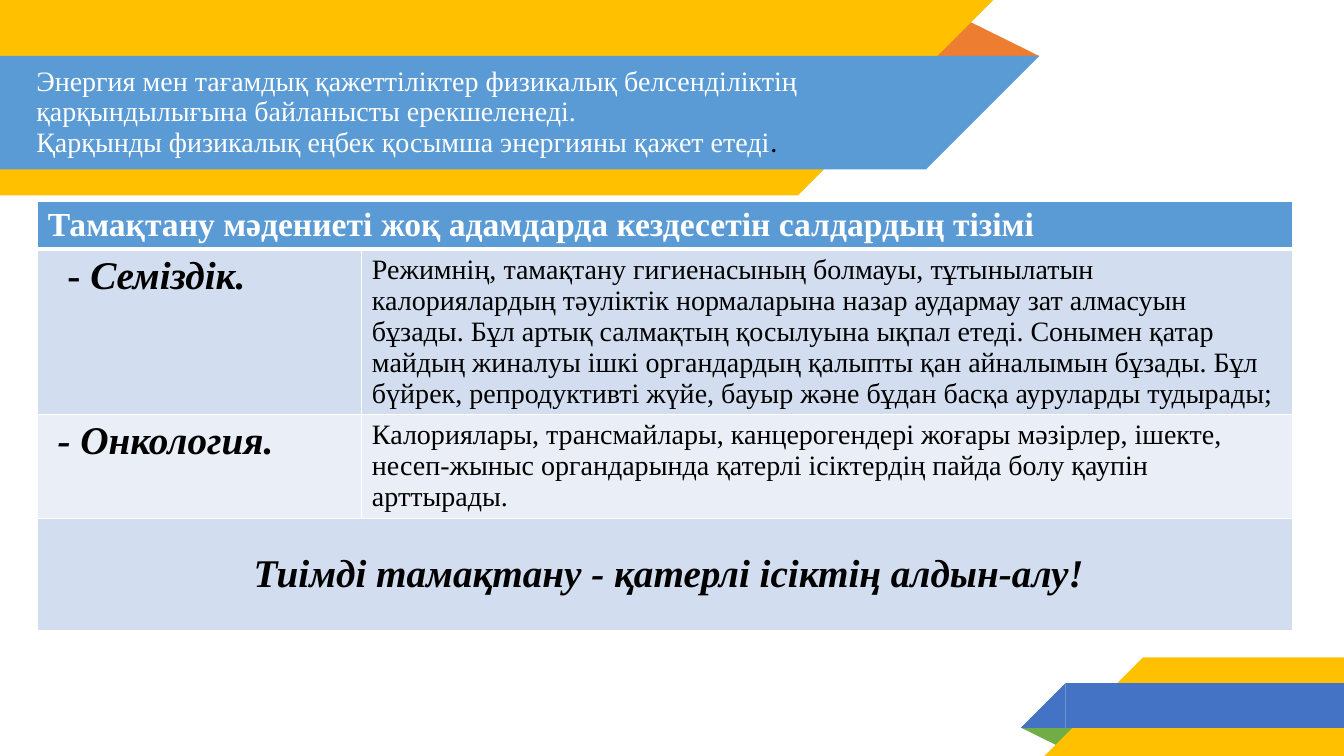
from dataclasses import dataclass

from lxml import etree
from pptx import Presentation
from pptx import util as u
from pptx.dml.color import RGBColor
from pptx.enum import shapes, text
from pptx.oxml import ns


@dataclass(frozen=True)
class Theme:
    serif: str = "Times New Roman"
    sans: str = "Calibri"
    yellow: str = "FFC000"
    sky: str = "5B9BD5"
    blue: str = "4472C4"
    orange: str = "ED7D31"
    green: str = "70AD47"
    row_dark: str = "D2DEEF"
    row_light: str = "EAEFF7"
    white: str = "FFFFFF"
    black: str = "000000"
    body: int = 20
    heading: int = 24
    accent: int = 28


THEME = Theme()
SLIDE_WIDTH, SLIDE_HEIGHT = 960, 540


def add_text(para, words, *, size=THEME.body, color=THEME.black,
             font=THEME.serif, bold=False, italic=False):
    span = para.add_run()
    span.text = words
    span.font.size, span.font.name = u.Pt(size), font
    span.font.bold, span.font.italic = bold, italic
    span.font.color.rgb = RGBColor.from_string(color)


def add_block(page, kind, left, top, width, height, color, rotation=0):
    box = page.shapes.add_shape(kind, u.Pt(left), u.Pt(top), u.Pt(width), u.Pt(height))
    box.shadow.inherit = False
    box.fill.solid()
    box.fill.fore_color.rgb = RGBColor.from_string(color)
    box.line.fill.background()
    box.rotation = rotation
    return box


def add_ribbon(page, top, length, height, color, from_right=False):
    """A bar from one slide edge, ending in a 45-degree slant."""
    bar_left = SLIDE_WIDTH - length if from_right else 0
    tip_left = bar_left - height if from_right else length
    kinds = shapes.MSO_SHAPE
    add_block(page, kinds.RECTANGLE, bar_left, top, length, height, color)
    add_block(page, kinds.RIGHT_TRIANGLE, tip_left, top, height, height, color,
              270 if from_right else 90)


def add_fold(page, left, top, width, height, color, rotation=0):
    fold = add_block(page, shapes.MSO_SHAPE.ISOSCELES_TRIANGLE,
                     left, top, width, height, color, rotation)
    fold.adjustments[0] = 0.324


def add_title(page):
    title = page.shapes.title
    title.left, title.top = u.Pt(18.7), u.Pt(59)
    title.width, title.height = u.Pt(659.5), u.Pt(43.2)
    frame = title.text_frame
    frame.word_wrap = True
    frame.auto_size = text.MSO_AUTO_SIZE.NONE
    frame.vertical_anchor = text.MSO_ANCHOR.MIDDLE
    frame.margin_left = frame.margin_right = u.Pt(7.2)
    frame.margin_top = frame.margin_bottom = u.Pt(7.2)
    para = frame.paragraphs[0]
    para.alignment = text.PP_ALIGN.LEFT
    para.line_spacing = 0.9
    add_text(para, "Энергия мен тағамдық қажеттіліктер физикалық белсенділіктің "
             "қарқындылығына байланысты ерекшеленеді.", color=THEME.white)
    para.add_line_break()
    add_text(para, "Қарқынды физикалық еңбек қосымша энергияны қажет етеді",
             color=THEME.white)
    add_text(para, ".", font=THEME.sans)


def set_border(cell, side, width):
    line = etree.SubElement(cell._tc.get_or_add_tcPr(), ns.qn(f"a:ln{side}"),
                            w=str(u.Pt(width)))
    fill = etree.SubElement(line, ns.qn("a:solidFill"))
    etree.SubElement(fill, ns.qn("a:srgbClr"), val=THEME.white)


def style_cell(cell, row, color):
    for side in "LRTB":
        under_header = (row, side) in ((0, "B"), (1, "T"))
        set_border(cell, side, 3 if under_header else 1)
    cell.fill.solid()
    cell.fill.fore_color.rgb = RGBColor.from_string(color)


def fill_cell(cell, words, indent=0, **style):
    cell.margin_left = u.Pt(7.2 + indent)
    para = cell.text_frame.paragraphs[0]
    add_text(para, words, **style)
    return para


def add_effects_table(page):
    heights = (34, 118, 74, 80.5)
    widths = (231.5, 664.9)
    colors = (THEME.sky, THEME.row_dark, THEME.row_light, THEME.row_dark)
    table = page.shapes.add_table(len(heights), len(widths), u.Pt(27), u.Pt(144),
                                  u.Pt(sum(widths)), u.Pt(sum(heights))).table
    for column, width in zip(table.columns, widths):
        column.width = u.Pt(width)
    for index, (row, height, color) in enumerate(zip(table.rows, heights, colors)):
        row.height = u.Pt(height)
        for cell in row.cells:
            style_cell(cell, index, color)
    for index in (0, 3):
        table.cell(index, 0).merge(table.cell(index, 1))

    # Heading
    fill_cell(table.cell(0, 0),
              "Тамақтану мәдениеті жоқ адамдарда кездесетін салдардың тізімі",
              size=THEME.heading, color=THEME.white, bold=True)

    # Conditions and their causes
    obesity = fill_cell(table.cell(1, 0), "- ", indent=14, size=THEME.accent, bold=True)
    add_text(obesity, "Семіздік.", size=THEME.accent, bold=True, italic=True)
    fill_cell(table.cell(1, 1),
              "Режимнің, тамақтану гигиенасының болмауы, тұтынылатын калориялардың "
              "тәуліктік нормаларына назар аудармау зат алмасуын бұзады. Бұл артық "
              "салмақтың қосылуына ықпал етеді. Сонымен қатар майдың жиналуы ішкі "
              "органдардың қалыпты қан айналымын бұзады. Бұл бүйрек, репродуктивті "
              "жүйе, бауыр және бұдан басқа ауруларды тудырады;")
    fill_cell(table.cell(2, 0), "- Онкология.", indent=7,
              size=THEME.accent, bold=True, italic=True)
    fill_cell(table.cell(2, 1),
              "Калориялары, трансмайлары, канцерогендері жоғары мәзірлер, ішекте, "
              "несеп-жыныс органдарында қатерлі ісіктердің пайда болу қаупін арттырады.")

    # Conclusion
    ending = table.cell(3, 0)
    ending.vertical_anchor = text.MSO_ANCHOR.MIDDLE
    para = fill_cell(ending, "Тиімді тамақтану - қатерлі ісіктің алдын-алу!", indent=5,
                     size=THEME.accent, bold=True, italic=True)
    para.alignment = text.PP_ALIGN.CENTER


def main():
    deck = Presentation()
    deck.slide_width, deck.slide_height = u.Pt(SLIDE_WIDTH), u.Pt(SLIDE_HEIGHT)
    page = deck.slides.add_slide(deck.slide_layouts[5])

    # Bottom right ribbons
    add_fold(page, 729.4, 519.8, 41, 13.7, THEME.green, 180)
    add_ribbon(page, 469.5, 143.5, 70.5, THEME.yellow, from_right=True)
    add_ribbon(page, 488, 199, 32, THEME.blue, from_right=True)

    # Top left ribbons
    add_fold(page, 661, 12.9, 81.5, 27.2, THEME.orange)
    add_ribbon(page, 0, 570, 139.5, THEME.yellow)
    add_ribbon(page, 40, 661.5, 81, THEME.sky)

    add_title(page)
    # Keep the title above the ribbons
    page.shapes._spTree.append(page.shapes.title._element)
    add_effects_table(page)
    deck.save("out.pptx")


if __name__ == "__main__":
    main()
